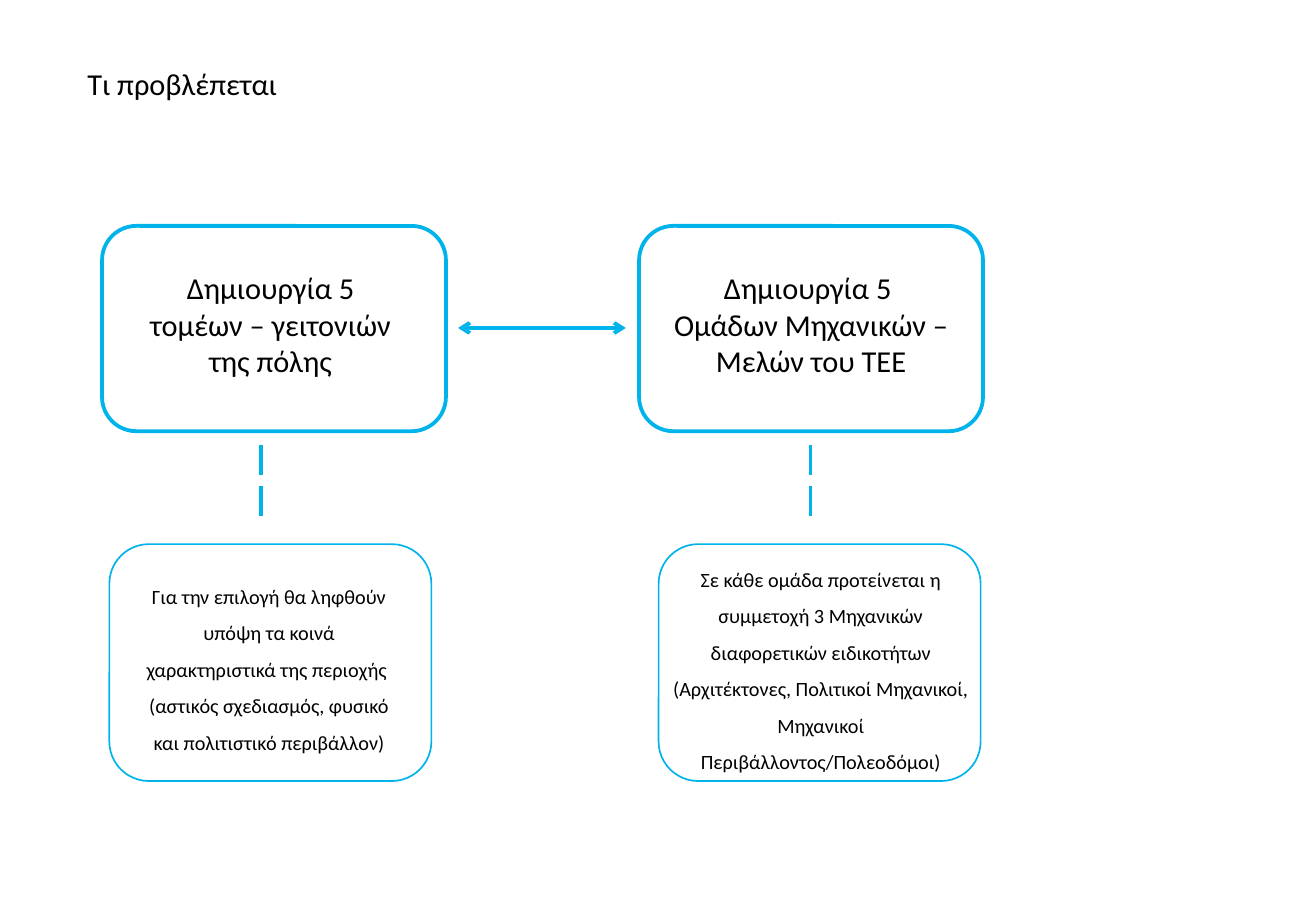
from lxml import etree
from pptx import Presentation
from pptx.dml.color import RGBColor
from pptx.enum.dml import MSO_LINE
from pptx.enum.shapes import MSO_CONNECTOR, MSO_SHAPE
from pptx.enum.text import MSO_AUTO_SIZE, PP_ALIGN
from pptx.oxml.ns import qn
from pptx.util import Pt

PX = 9144
COLORS = {"accent": "00B3EA", "ink": "000000"}
FONT = "Calibri"

TITLE_BOX = (62, 49, 464, 40)
THEMES = [
    ((84, 186, 283, 169), ["Δημιουργία 5 ", "τομέων – γειτονιών ", "της πόλης "]),
    ((526, 186, 283, 169), ["Δημιουργία 5 ", "Ομάδων Μηχανικών –Μελών του ΤΕΕ"]),
]
DETAILS = [
    ((90, 448, 265, 195), (20, 18, 223, 158), [
        "Για την επιλογή θα ληφθούν υπόψη τα κοινά χαρακτηριστικά της περιοχής ",
        "(αστικός σχεδιασμός, φυσικό και πολιτιστικό περιβάλλον)",
    ]),
    ((542, 448, 265, 195), (0, 4, 267, 189), [
        "Σε κάθε ομάδα προτείνεται η συμμετοχή 3 Μηχανικών διαφορετικών ειδικοτήτων "
        "(Αρχιτέκτονες, Πολιτικοί Μηχανικοί, Μηχανικοί Περιβάλλοντος/Πολεοδόμοι)",
    ]),
]


def emu(lengths):
    """Turn px lengths into EMU."""
    return [length * PX for length in lengths]


def color(name):
    """Return a palette colour."""
    return RGBColor.from_string(COLORS[name])


def add_text(slide, box, paragraphs, size=18, align=PP_ALIGN.LEFT, spacing=None):
    """Place wrapped paragraphs in a text box."""
    frame = slide.shapes.add_textbox(*emu(box)).text_frame
    frame.word_wrap = True
    frame.auto_size = MSO_AUTO_SIZE.SHAPE_TO_FIT_TEXT
    for index, words in enumerate(paragraphs):
        paragraph = frame.add_paragraph() if index else frame.paragraphs[0]
        paragraph.alignment = align
        paragraph.line_spacing = spacing
        run = paragraph.add_run()
        run.text = words
        run.font.size = Pt(size)
        run.font.name = FONT
        run.font.color.rgb = color("ink")


def add_frame(slide, box, weight):
    """Draw an unfilled rounded outline."""
    outline = slide.shapes.add_shape(MSO_SHAPE.ROUNDED_RECTANGLE, *emu(box))
    outline.shadow.inherit = False
    outline.fill.background()
    outline.line.color.rgb = color("accent")
    outline.line.width = Pt(weight)


def add_link(slide, ends, dash=None, arrows=False):
    """Draw a straight link, dashed or with arrows at both ends."""
    link = slide.shapes.add_connector(MSO_CONNECTOR.STRAIGHT, *emu(ends))
    link.line.color.rgb = color("accent")
    link.line.width = Pt(2.25)
    if dash:
        link.line.dash_style = dash
    properties = link._element.spPr
    if arrows:
        for end in ("a:headEnd", "a:tailEnd"):
            etree.SubElement(properties.find(qn("a:ln")), qn(end), type="arrow")
    etree.SubElement(properties, qn("a:effectLst"))


def add_theme(slide, box, paragraphs):
    """Place a main box with its centred heading."""
    left, top, width, height = box
    add_frame(slide, box, 2.25)
    add_text(slide, (left + 12, top + 31, width - 24, 101), paragraphs,
             align=PP_ALIGN.CENTER)


def add_detail(slide, box, inset, paragraphs):
    """Place a detail box, its text and the dashed link above it."""
    left, top, width, height = box
    dx, dy, text_width, text_height = inset
    add_frame(slide, box, 1)
    add_text(slide, (left + dx, top + dy, text_width, text_height), paragraphs,
             size=12, align=PP_ALIGN.CENTER, spacing=1.5)
    link_x = left + 125
    add_link(slide, (link_x, top - 82, link_x, top - 14), dash=MSO_LINE.LONG_DASH)


def add_theme_link(slide, first, second):
    """Join two main boxes with a double arrow."""
    y = first[1] + first[3] // 2
    add_link(slide, (first[0] + first[2] + 10, y, second[0] - 11, y), arrows=True)


def main():
    """Build and save the slide."""
    deck = Presentation()
    deck.slide_width, deck.slide_height = emu((1083, 750))
    slide = deck.slides.add_slide(deck.slide_layouts[6])
    add_text(slide, TITLE_BOX, ["Τι προβλέπεται"])
    for box, paragraphs in THEMES:
        add_theme(slide, box, paragraphs)
    for box, inset, paragraphs in DETAILS:
        add_detail(slide, box, inset, paragraphs)
    add_theme_link(slide, THEMES[0][0], THEMES[1][0])
    deck.save("out.pptx")


if __name__ == "__main__":
    main()
